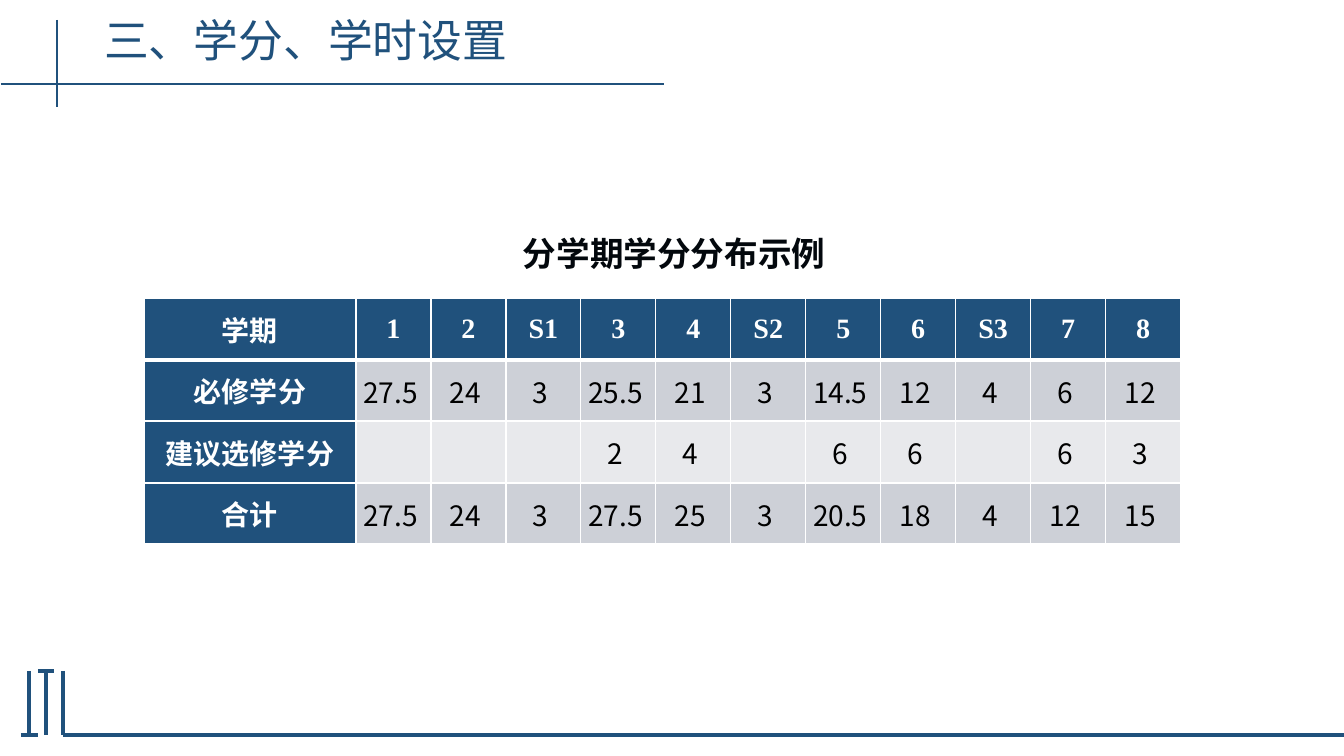
from dataclasses import dataclass
from lxml import etree
from pptx import Presentation, util as u
from pptx.dml.color import RGBColor
from pptx.enum import shapes, text
from pptx.oxml.ns import qn

TITLE = "三、学分、学时设置"
CAPTION = "分学期学分分布示例"
ROWS = [
    ("学期", "1", "2", "S1", "3", "4", "S2", "5", "6", "S3", "7", "8"),
    ("必修学分", "27.5", "24", "3", "25.5", "21", "3", "14.5", "12", "4", "6", "12"),
    ("建议选修学分", "", "", "", "2", "4", "", "6", "6", "", "6", "3"),
    ("合计", "27.5", "24", "3", "27.5", "25", "3", "20.5", "18", "4", "12", "15"),
]
HEAD = [(1, 84, 664, 84), (57, 20, 57, 107)]
FOOT = [(x, 671, x, 735) for x in (63, 46, 29)] + [
    (21, 735, 38, 735), (38, 671, 54, 671), (63, 735, 1344, 735)]


@dataclass(frozen=True)
class Theme:
    blue: str = "20517C"
    white: str = "FFFFFF"
    black: str = "000000"
    ink: str = "03080D"
    odd: str = "CDD0D7"
    even: str = "E8E9EC"
    serif: str = "Times New Roman"
    sans: str = "Noto Sans CJK SC"
    title: int = 32
    label: int = 24
    cell: int = 20


T = Theme()
LEFT, MID = text.PP_ALIGN.LEFT, text.PP_ALIGN.CENTER


def px(n):
    return u.Emu(round(n * 914400 / 100.8))


def write(frame, words, size, color, face=T.sans, bold=False, align=LEFT, lead=1.0):
    para = frame.paragraphs[0]
    para.alignment = align
    para.line_spacing = lead
    para.space_before = u.Pt(0)
    run = para.add_run()
    run.text = words
    font = run.font
    font.size, font.bold, font.name = u.Pt(size), bold, face
    font.color.rgb = RGBColor.from_string(color)
    east = etree.SubElement(run._r.get_or_add_rPr(), qn("a:ea"))
    east.set("typeface", T.sans)


def rule(slide, ends, width):
    line = slide.shapes.add_connector(
        shapes.MSO_CONNECTOR.STRAIGHT, *[px(n) for n in ends])
    line.line.color.rgb = RGBColor.from_string(T.blue)
    line.line.width = u.Pt(width)
    etree.SubElement(line._element.spPr, qn("a:effectLst"))


def edge(cell, top, bottom):
    props = cell._tc.get_or_add_tcPr()
    sides = [("L", 1), ("R", 1), ("T", top), ("B", bottom)]
    for spot, (side, width) in enumerate(sides):
        line = etree.Element(qn("a:ln" + side), w=str(u.Pt(width)))
        fill = etree.SubElement(line, qn("a:solidFill"))
        etree.SubElement(fill, qn("a:srgbClr"), val=T.white)
        props.insert(spot, line)


def grid(slide):
    rows, cols = len(ROWS), len(ROWS[0])
    wide, step = 212, 75
    tall = [62, 61, 62, 61]
    table = slide.shapes.add_table(
        rows, cols, px(144), px(298),
        px(wide + step * (cols - 1)), px(sum(tall))).table
    for c, col in enumerate(table.columns):
        col.width = px(step if c else wide)
    for r, row in enumerate(ROWS):
        table.rows[r].height = px(tall[r])
        for c, words in enumerate(row):
            cell = table.cell(r, c)
            head = r == 0 or c == 0
            tint = T.blue if head else T.odd if r % 2 else T.even
            cell.fill.solid()
            cell.fill.fore_color.rgb = RGBColor.from_string(tint)
            edge(cell, 3 if r == 1 else 1, 1 if r else 3)
            cell.vertical_anchor = text.MSO_ANCHOR.MIDDLE
            if not head:
                cell.margin_left = cell.margin_top = px(1)
                cell.margin_right, cell.margin_bottom = px(7), px(0)
            if words:
                write(cell.text_frame, words, T.cell,
                      T.white if head else T.black,
                      face=T.serif if head else T.sans, bold=head, align=MID)


def main():
    deck = Presentation()
    deck.slide_width, deck.slide_height = px(1344), px(756)
    slide = deck.slides.add_slide(deck.slide_layouts[5])

    for ends in FOOT:
        rule(slide, ends, 2.5)

    title = slide.shapes.title
    title.left, title.top, title.width, title.height = map(px, (94, 16, 587, 54))
    frame = title.text_frame
    frame.auto_size = text.MSO_AUTO_SIZE.NONE
    frame.vertical_anchor = text.MSO_ANCHOR.MIDDLE
    write(frame, TITLE, T.title, T.blue, face=T.serif, lead=0.9)

    for ends in HEAD:
        rule(slide, ends, 1.75)

    grid(slide)

    frame = slide.shapes.add_textbox(*map(px, (513, 208, 328, 72))).text_frame
    frame.word_wrap = False
    frame.auto_size = text.MSO_AUTO_SIZE.SHAPE_TO_FIT_TEXT
    write(frame, CAPTION, T.label, T.ink, bold=True, lead=1.5)

    deck.save("out.pptx")


if __name__ == "__main__":
    main()
